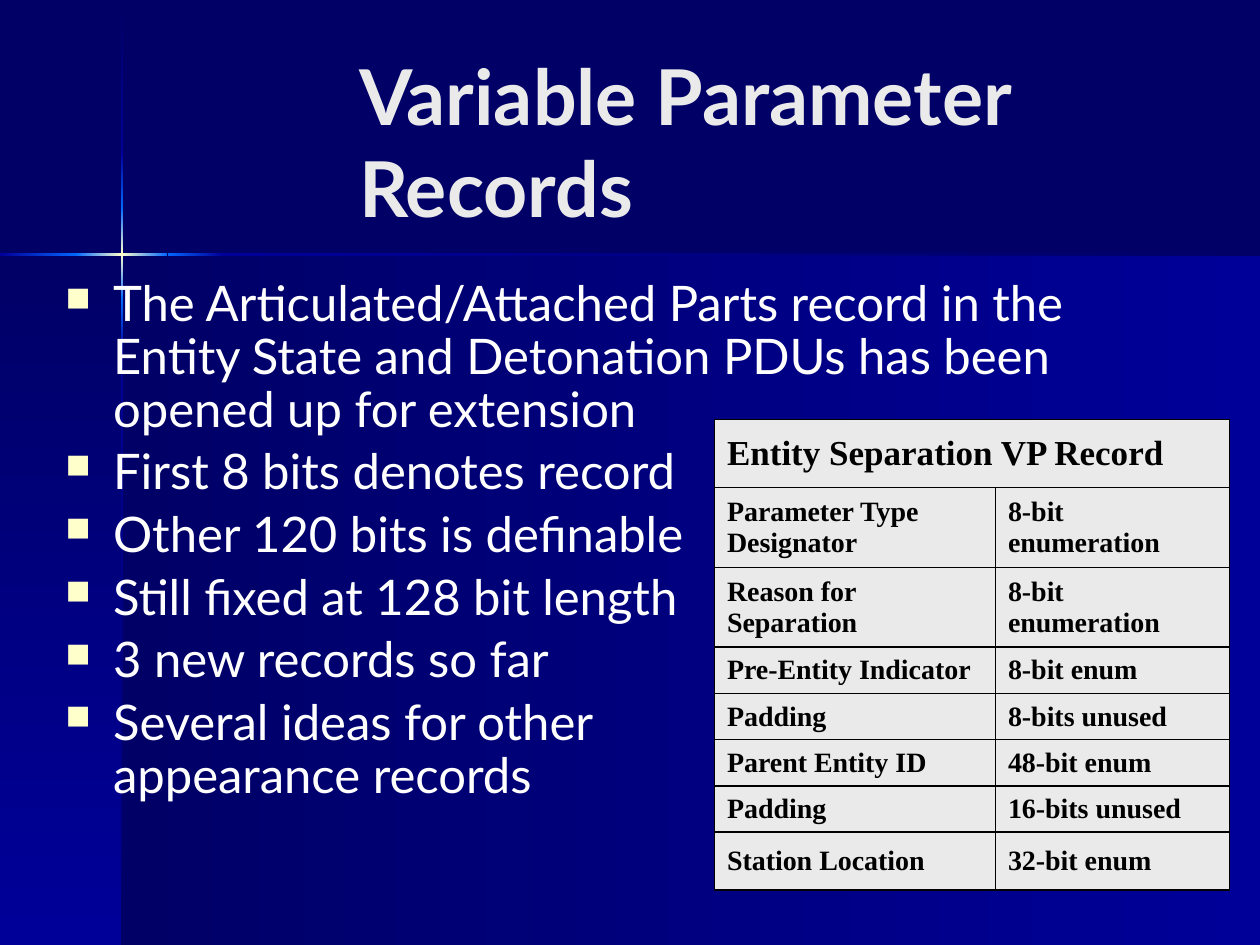
import pptx
import pptx.dml.color
import pptx.enum.shapes
import pptx.enum.text
import pptx.oxml
import pptx.oxml.ns
import pptx.util
from pptx.util import Inches

COLORS = {
    "navy": "000066",
    "royal": "000099",
    "azure": "0066FF",
    "cream": "FFFFCC",
    "pale": "EAEAEA",
    "white": "FFFFFF",
    "black": "000000",
}
HORIZONTAL, VERTICAL = 0, 270
DARK_TO_LIGHT = ["navy", "royal"]
LIGHT_TO_DARK = ["royal", "navy"]
BRIGHTEN = ["royal", "azure"]
DIM = ["azure", "royal"]
GLOW = ["azure", "cream", "azure"]
BACKDROP = [
    (0.97, 2.02, 9.03, 5.48, DARK_TO_LIGHT, HORIZONTAL),
    (0, 2.02, 0.97, 5.48, DARK_TO_LIGHT, VERTICAL),
    (0.96, 0.01, 0.02, 1.2, DARK_TO_LIGHT, VERTICAL),
    (0.96, 2.82, 0.02, 4.68, LIGHT_TO_DARK, VERTICAL),
    (1.77, 2.01, 8.23, 0.02, LIGHT_TO_DARK, HORIZONTAL),
    (0.96, 2.38, 0.02, 0.44, DIM, VERTICAL),
    (0.96, 1.21, 0.02, 0.44, BRIGHTEN, VERTICAL),
    (0.96, 1.65, 0.02, 0.73, GLOW, VERTICAL),
    (0, 2.01, 0.61, 0.02, BRIGHTEN, HORIZONTAL),
    (1.33, 2.01, 0.44, 0.02, DIM, HORIZONTAL),
    (0.6, 2.01, 0.73, 0.02, GLOW, HORIZONTAL),
]
INTRO = [
    "The Articulated/Attached Parts record in the Entity State and "
    "Detonation PDUs has been opened up for extension",
]
DETAILS = [
    "First 8 bits denotes record",
    "Other 120 bits is definable",
    "Still fixed at 128 bit length",
    "3 new records so far",
    "Several ideas for other appearance records",
]
RECORD_TITLE = "Entity Separation VP Record"
FIELDS = [
    ("Parameter Type Designator", "8-bit enumeration"),
    ("Reason for Separation", "8-bit enumeration"),
    ("Pre-Entity Indicator", "8-bit enum"),
    ("Padding", "8-bits unused"),
    ("Parent Entity ID", "48-bit enum"),
    ("Padding", "16-bits unused"),
    ("Station Location", "32-bit enum"),
]
COLUMN_WIDTHS = [2.23, 1.86]
ROW_HEIGHTS = [0.54, 0.63, 0.6, 0.35, 0.35, 0.35, 0.35, 0.46]


def rgb(name):
    return pptx.dml.color.RGBColor.from_string(COLORS[name])


def add_xml(parent, text):
    head, tail = text.split(">", 1) if "/>" not in text.split(">", 1)[0] + ">" else (text[:-2], None)
    declared = f"{head} {pptx.oxml.ns.nsdecls('a')}"
    parent.append(pptx.oxml.parse_xml(declared + ("/>" if tail is None else ">" + tail)))


def format_font(font, **values):
    color = values.pop("color")
    for name, value in values.items():
        setattr(font, name, value)
    font.color.rgb = rgb(color)


def add_gradient_bar(page, left, top, width, height, colors, angle):
    bar = page.shapes.add_shape(
        pptx.enum.shapes.MSO_SHAPE.RECTANGLE,
        Inches(left), Inches(top), Inches(width), Inches(height),
    )
    bar.shadow.inherit = False
    bar.line.fill.background()
    bar.fill.gradient()
    bar.fill.gradient_angle = angle
    stops = bar._element.spPr.find(".//" + pptx.oxml.ns.qn("a:gsLst"))
    for stop in list(stops):
        stops.remove(stop)
    for index, color in enumerate(colors):
        position = index * 100000 // (len(colors) - 1)
        add_xml(stops, f'<a:gs pos="{position}"><a:srgbClr val="{COLORS[color]}"/></a:gs>')


def set_title(page, text):
    title = page.shapes.title
    page.shapes._spTree.append(title._element)
    place = {"left": 2.75, "top": 0.33, "width": 6.92, "height": 1.57}
    for name, value in place.items():
        setattr(title, name, Inches(value))
    frame = title.text_frame
    frame.text = text
    frame.word_wrap = True
    frame.auto_size = pptx.enum.text.MSO_AUTO_SIZE.NONE
    frame.vertical_anchor = pptx.enum.text.MSO_ANCHOR.MIDDLE
    para = frame.paragraphs[0]
    para.alignment = pptx.enum.text.PP_ALIGN.LEFT
    format_font(para.runs[0].font, name="Lato", size=pptx.util.Pt(44), bold=True, color="pale")


def add_bullets(page, left, top, width, height, lines):
    box = page.shapes.add_textbox(Inches(left), Inches(top), Inches(width), Inches(height))
    frame = box.text_frame
    frame.word_wrap = True
    for index, line in enumerate(lines):
        para = frame.add_paragraph() if index else frame.paragraphs[0]
        para.text = line
        properties = para._p.get_or_add_pPr()
        properties.set("marL", str(Inches(0.38)))
        properties.set("indent", str(-Inches(0.38)))
        add_xml(properties, f'<a:buClr><a:srgbClr val="{COLORS["cream"]}"/></a:buClr>')
        add_xml(properties, '<a:buSzPct val="70000"/>')
        add_xml(properties, '<a:buChar char="■"/>')
        para.line_spacing = 0.9
        if index:
            para.space_before = pptx.util.Pt(5.6)
        format_font(para.runs[0].font, name="Lato", size=pptx.util.Pt(28), color="white")


def fill_cell(cell, text, size):
    properties = cell._tc.get_or_add_tcPr()
    for side in "LRTB":
        add_xml(
            properties,
            f'<a:ln{side} w="12700"><a:solidFill><a:srgbClr val="{COLORS["black"]}"/>'
            f"</a:solidFill></a:ln{side}>",
        )
    cell.fill.solid()
    cell.fill.fore_color.rgb = rgb("pale")
    cell.vertical_anchor = pptx.enum.text.MSO_ANCHOR.MIDDLE
    if text:
        cell.text = text
        font = cell.text_frame.paragraphs[0].runs[0].font
        format_font(font, name="Times New Roman", size=pptx.util.Pt(size), bold=True, color="black")


def add_record_table(page):
    table = page.shapes.add_table(
        len(ROW_HEIGHTS), len(COLUMN_WIDTHS), Inches(5.67), Inches(3.33),
        Inches(sum(COLUMN_WIDTHS)), Inches(sum(ROW_HEIGHTS)),
    ).table
    table.first_row = False
    table.horz_banding = False
    for column, width in zip(table.columns, COLUMN_WIDTHS):
        column.width = Inches(width)
    for row, height in zip(table.rows, ROW_HEIGHTS):
        row.height = Inches(height)
    table.cell(0, 0).merge(table.cell(0, 1))
    for row, texts in zip(table.rows, [(RECORD_TITLE, ""), *FIELDS]):
        for cell, text in zip(row.cells, texts):
            fill_cell(cell, text, 20 if text == RECORD_TITLE else 16)


def main():
    deck = pptx.Presentation()
    deck.slide_width, deck.slide_height = Inches(10), Inches(7.5)
    page = deck.slides.add_slide(deck.slide_layouts[5])
    page.background.fill.solid()
    page.background.fill.fore_color.rgb = rgb("navy")
    for bar in BACKDROP:
        add_gradient_bar(page, *bar)
    set_title(page, "Variable Parameter Records")
    add_bullets(page, 0.42, 2.17, 8.75, 1.42, INTRO)
    add_record_table(page)
    add_bullets(page, 0.42, 3.5, 5.17, 3.5, DETAILS)
    deck.save("out.pptx")


if __name__ == "__main__":
    main()
